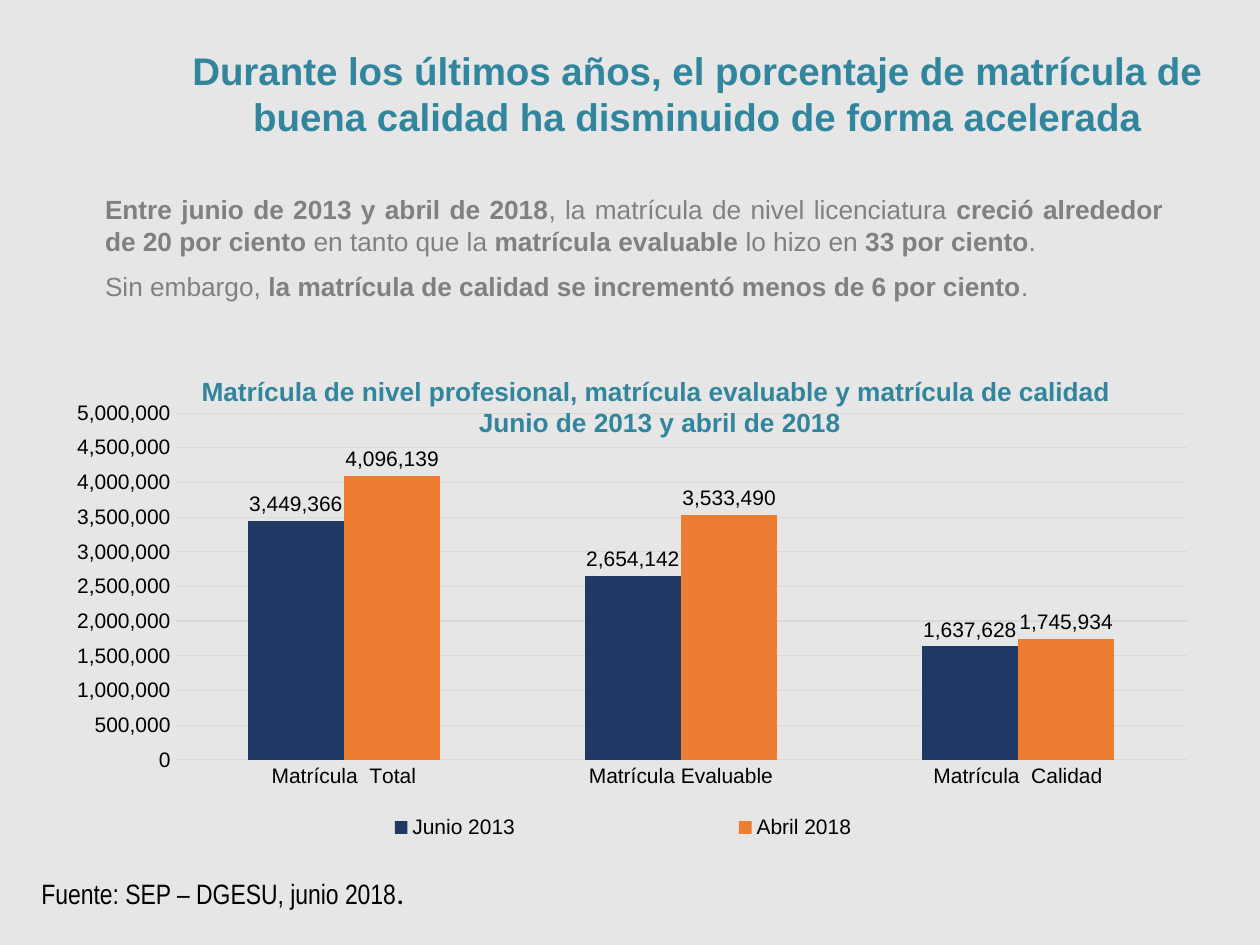
from dataclasses import dataclass

import lxml.etree
import pptx
import pptx.chart.data
import pptx.dml.color
import pptx.enum.chart
import pptx.enum.shapes
import pptx.enum.text
import pptx.oxml.ns
import pptx.util

Pt = pptx.util.Pt
Align = pptx.enum.text.PP_ALIGN
Anchor = pptx.enum.text.MSO_ANCHOR


@dataclass(frozen=True)
class Theme:
    """Colours, fonts and type sizes of the deck."""
    background: str = "E7E6E6"
    teal: str = "31859C"
    grey: str = "808080"
    black: str = "000000"
    grid: str = "D9D9D9"
    navy: str = "203864"
    orange: str = "ED7D31"
    font: str = "Arial"
    narrow: str = "Arial Narrow"
    stop_font: str = "Calibri"
    title: float = 22
    body: float = 15
    chart: float = 12
    source: float = 16
    stop: float = 18


@dataclass(frozen=True)
class Box:
    """Position and size in points."""
    left: float
    top: float
    width: float
    height: float


@dataclass(frozen=True)
class Span:
    """A piece of text with its own look."""
    text: str
    size: float
    color: str
    font: str = "Arial"
    bold: bool = False


@dataclass(frozen=True)
class Series:
    """One set of columns."""
    name: str
    values: tuple[int, ...]
    color: str


THEME = Theme()
TITLE = "Durante los últimos años, el porcentaje de matrícula de buena calidad ha disminuido de forma acelerada"
CHART_TITLE = ("Matrícula de nivel profesional, matrícula evaluable y matrícula de calidad ",
               "Junio de 2013 y abril de 2018")
BODY = (
    (("Entre junio de 2013 y abril de 2018", True),
     (", la matrícula de nivel licenciatura ", False),
     ("creció alrededor de 20 por ciento ", True),
     ("en tanto que la ", False),
     ("matrícula evaluable ", True),
     ("lo hizo en ", False),
     ("33 por ciento", True),
     (".", False)),
    (("Sin embargo, ", False),
     ("la matrícula de calidad se incrementó menos de 6 por ciento", True),
     (".", False)),
)
CATEGORIES = ("Matrícula  Total", "Matrícula Evaluable", "Matrícula  Calidad")
SERIES = (Series("Junio 2013", (3449366, 2654142, 1637628), THEME.navy),
          Series("Abril 2018", (4096139, 3533490, 1745934), THEME.orange))


def rgb(color: str) -> pptx.dml.color.RGBColor:
    """Return a colour from its hex code."""
    return pptx.dml.color.RGBColor.from_string(color)


def place(shape, box: Box) -> None:
    """Move and size a shape."""
    shape.left, shape.top = Pt(box.left), Pt(box.top)
    shape.width, shape.height = Pt(box.width), Pt(box.height)


def write(frame, paras: list[list[Span]], align: Align, anchor: Anchor, gap: float = 0) -> None:
    """Fill a text frame with formatted paragraphs."""
    frame.vertical_anchor = anchor
    frame.auto_size = pptx.enum.text.MSO_AUTO_SIZE.SHAPE_TO_FIT_TEXT
    for index, spans in enumerate(paras):
        para = frame.add_paragraph() if index else frame.paragraphs[0]
        para.alignment = align
        para.space_before = Pt(gap)
        for span in spans:
            run = para.add_run()
            run.text = span.text
            run.font.size = Pt(span.size)
            run.font.name = span.font
            run.font.bold = span.bold
            run.font.color.rgb = rgb(span.color)


def remove_bullets(frame) -> None:
    """Turn list paragraphs into plain ones."""
    for para in frame.paragraphs:
        props = para._p.get_or_add_pPr()
        props.set("marL", "0")
        props.set("indent", "0")
        lxml.etree.SubElement(props, pptx.oxml.ns.qn("a:buNone"))


def set_layout(parent, before: str, fractions: dict[str, float], inner: bool = False) -> None:
    """Give a chart part a manual layout, as fractions of the chart."""
    qn = pptx.oxml.ns.qn
    for old in parent.findall(qn("c:layout")):
        parent.remove(old)
    layout = lxml.etree.Element(qn("c:layout"))
    parent.find(qn(before)).addprevious(layout)
    manual = lxml.etree.SubElement(layout, qn("c:manualLayout"))
    settings = {"layoutTarget": "inner"} if inner else {}
    settings |= {"xMode": "edge", "yMode": "edge"} | fractions
    for name, value in settings.items():
        lxml.etree.SubElement(manual, qn(f"c:{name}")).set("val", str(value))


def add_columns(page, box: Box) -> None:
    """Draw the enrolment column chart."""
    data = pptx.chart.data.CategoryChartData(number_format="#,##0")
    data.categories = CATEGORIES
    for item in SERIES:
        data.add_series(item.name, item.values)
    kinds = pptx.enum.chart
    chart = page.shapes.add_chart(
        kinds.XL_CHART_TYPE.COLUMN_CLUSTERED,
        Pt(box.left), Pt(box.top), Pt(box.width), Pt(box.height), data).chart
    chart.has_title = False
    chart.font.size = Pt(THEME.chart)
    chart.font.name = THEME.font
    chart.font.color.rgb = rgb(THEME.black)

    plot = chart.plots[0]
    plot.gap_width, plot.overlap, plot.vary_by_categories = 150, 0, False
    for series, item in zip(plot.series, SERIES):
        series.format.fill.solid()
        series.format.fill.fore_color.rgb = rgb(item.color)
        labels = series.data_labels
        labels.show_value = True
        labels.number_format, labels.number_format_is_linked = "#,##0", False
        labels.position = kinds.XL_LABEL_POSITION.OUTSIDE_END

    values, names = chart.value_axis, chart.category_axis
    values.minimum_scale, values.maximum_scale, values.major_unit = 0, 5000000, 500000
    values.tick_labels.number_format = "#,##0"
    values.tick_labels.number_format_is_linked = False
    values.format.line.fill.background()
    for axis in (values, names):
        axis.major_tick_mark = axis.minor_tick_mark = kinds.XL_TICK_MARK.NONE
    for line in (values.major_gridlines.format.line, names.format.line):
        line.color.rgb = rgb(THEME.grid)
        line.width = Pt(0.75)

    chart.has_legend = True
    chart.legend.position = kinds.XL_LEGEND_POSITION.BOTTOM
    chart.legend.include_in_layout = False
    area = chart._chartSpace.chart.plotArea
    set_layout(area, "c:barChart", {"x": 0.108, "y": 0.183, "w": 0.863, "h": 0.646}, inner=True)
    set_layout(chart.legend._element, "c:overlay", {"x": 0.11, "y": 0.92, "w": 0.76, "h": 0.07})


def main() -> None:
    """Build and save the slide."""
    deck = pptx.Presentation()
    deck.slide_width, deck.slide_height = Pt(720), Pt(540)
    page = deck.slides.add_slide(deck.slide_layouts[1])
    page.background.fill.solid()
    page.background.fill.fore_color.rgb = rgb(THEME.background)

    title, body = page.shapes.title, page.placeholders[1]
    place(title, Box(100, 23, 597, 60.5))
    write(title.text_frame, [[Span(TITLE, THEME.title, THEME.teal, bold=True)]],
          Align.CENTER, Anchor.MIDDLE)

    add_columns(page, Box(28, 180, 669.5, 306.7))

    heading = page.shapes.add_shape(pptx.enum.shapes.MSO_SHAPE.ROUNDED_RECTANGLE,
                                    Pt(77.8), Pt(207.4), Pt(598.3), Pt(68.4))
    heading.shadow.inherit = False
    heading.fill.background()
    heading.line.fill.background()
    write(heading.text_frame,
          [[Span(text, THEME.body, THEME.teal, bold=True)] for text in CHART_TITLE],
          Align.CENTER, Anchor.TOP)

    place(body, Box(49, 102.2, 626.4, 78.5))
    frame = body.text_frame
    frame.margin_left = frame.margin_right = Pt(11)
    write(frame, [[Span(text, THEME.body, THEME.grey, bold=bold) for text, bold in spans]
                  for spans in BODY], Align.JUSTIFY, Anchor.MIDDLE, gap=7.5)
    remove_bullets(frame)

    source = page.shapes.add_textbox(Pt(16.6), Pt(495.4), Pt(224), Pt(28.8))
    source.text_frame.word_wrap = False
    write(source.text_frame,
          [[Span("Fuente: SEP – DGESU, junio 2018", THEME.source, THEME.black, THEME.narrow),
            Span(".", THEME.stop, THEME.black, THEME.stop_font)]], Align.LEFT, Anchor.TOP)
    deck.save("out.pptx")


if __name__ == "__main__":
    main()
